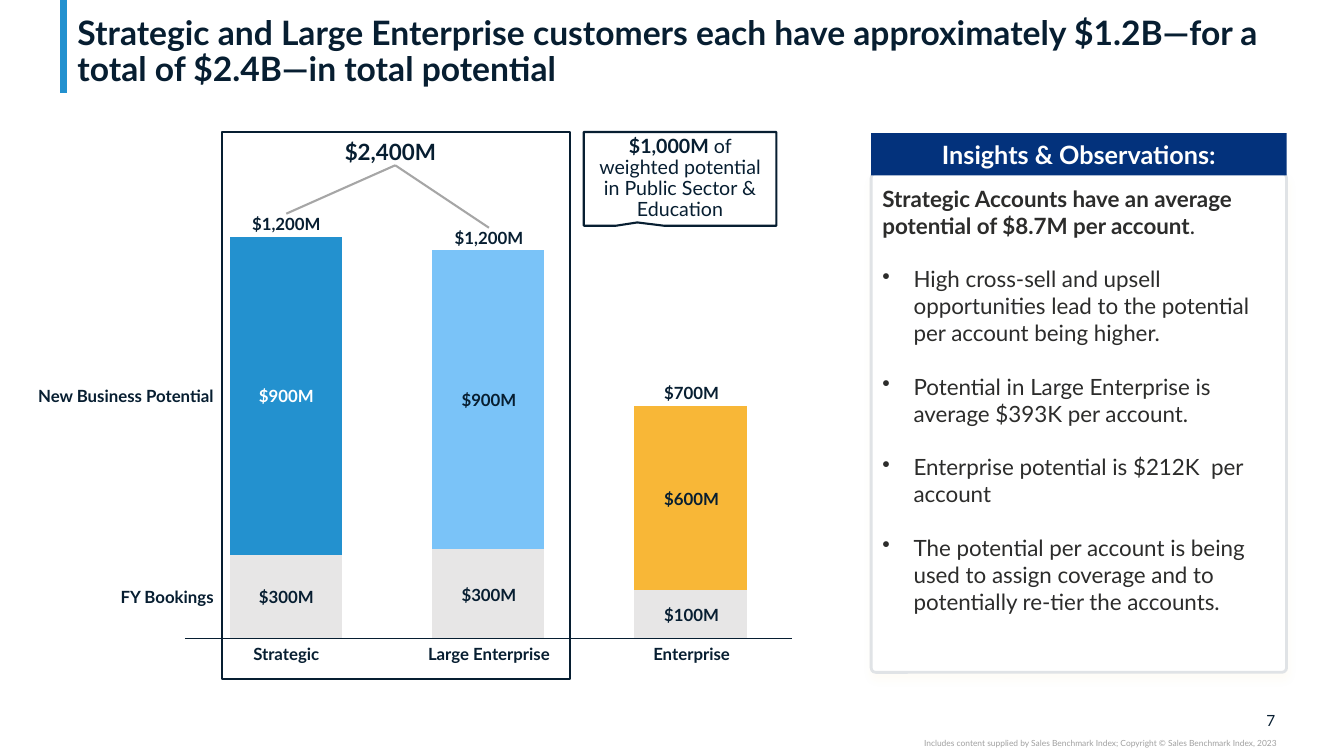
from dataclasses import dataclass
from typing import Any, NamedTuple

from lxml import etree
from pptx import Presentation
from pptx.chart import data as cd
from pptx.dml.color import RGBColor
from pptx.enum import chart as ch, shapes, text
from pptx.oxml.ns import qn
from pptx.util import Inches, Pt


@dataclass(frozen=True)
class Theme:
    face: str = "Lato"
    ink: str = "071E31"
    body: str = "2C2C2B"
    white: str = "FFFFFF"
    blue: str = "2391CF"
    sky: str = "7AC3F8"
    gold: str = "F8B737"
    navy: str = "03327C"
    pale: str = "E7E6E6"
    edge: str = "E0E3E6"
    ray: str = "A6A6A6"
    faint: str = "A0A0A0"
    title: float = 24
    head: float = 18
    large: float = 16
    call: float = 14
    label: float = 12
    page: float = 11
    tiny: float = 6


class Box(NamedTuple):
    x: float
    y: float
    w: float
    h: float


class Run(NamedTuple):
    words: str
    size: float
    color: str = "071E31"
    bold: bool = True


class Bar(NamedTuple):
    name: str
    total: str
    top: float
    gain: str
    mid: float
    book: str
    low: float
    fill: str
    tone: str


T = Theme()
AL, AN = text.PP_ALIGN, text.MSO_ANCHOR
FIRST, STEP, TALL = 2.84, 2.01, 0.2
BARS = [
    Bar("Strategic", "$1,200M", 2.12, "$900M", 3.83, "$300M", 5.82, T.blue, T.white),
    Bar("Large Enterprise", "$1,200M", 2.26, "$900M", 3.87, "$300M", 5.8, T.sky, T.ink),
    Bar("Enterprise", "$700M", 3.8, "$600M", 4.85, "$100M", 6, T.gold, T.ink),
]
NOTES = [
    "High cross-sell and upsell opportunities lead to the potential per account being higher.",
    "Potential in Large Enterprise is average $393K per account.",
    "Enterprise potential is $212K  per account",
    "The potential per account is being used to assign coverage and to potentially re-tier the accounts.",
]


def rgb(code: str) -> RGBColor:
    return RGBColor.from_string(code)


def put(item: Any, **vals: Any) -> None:
    for key, val in vals.items():
        setattr(item, key, val)


def node(root: Any, tag: str, **vals: Any) -> Any:
    return etree.SubElement(root, qn(tag), {k: str(v) for k, v in vals.items()})


def fill(item: Any, color: str) -> None:
    item.fill.solid()
    item.fill.fore_color.rgb = rgb(color)


def write(para: Any, runs: list[Run], **form: Any) -> None:
    put(para, **form)
    for part in runs:
        run = para.add_run()
        run.text = part.words
        put(run.font, name=T.face, size=Pt(part.size), bold=part.bold)
        run.font.color.rgb = rgb(part.color)


def frame(shape: Any, pad: tuple[float, float], anchor: Any, wrap: bool = True) -> Any:
    """Set insets (side, end), anchor and wrap; return the text frame."""
    side, end = map(Inches, pad)
    put(shape.text_frame, margin_left=side, margin_right=side, margin_top=end,
        margin_bottom=end, vertical_anchor=anchor, word_wrap=wrap)
    return shape.text_frame


def label(slide: Any, box: Box, run: Run, align: Any = AL.CENTER, anchor: Any = AN.MIDDLE,
          wrap: bool = False, side: float = 0, **form: Any) -> Any:
    shape = slide.shapes.add_textbox(*map(Inches, box))
    write(frame(shape, (side, 0), anchor, wrap).paragraphs[0], [run], alignment=align, **form)
    return shape


def block(slide: Any, kind: Any, box: Box, color: str | None = None,
          edge: str | None = None, width: float = 1.5) -> Any:
    shape = slide.shapes.add_shape(kind, *map(Inches, box))
    shape.shadow.inherit = False
    if color:
        fill(shape, color)
    else:
        shape.fill.background()
    if edge:
        shape.line.color.rgb = rgb(edge)
        shape.line.width = Pt(width)
    else:
        shape.line.fill.background()
    return shape


def rule(slide: Any, ends: tuple[float, ...], color: str, width: float) -> Any:
    line = slide.shapes.add_connector(shapes.MSO_CONNECTOR.STRAIGHT, *map(Inches, ends))
    line.line.color.rgb = rgb(color)
    line.line.width = Pt(width)
    node(line._element.spPr, "a:effectLst")
    return line


def stack(slide: Any) -> None:
    """Draw the stacked columns; labels are placed over them."""
    data = cd.CategoryChartData()
    data.categories = ["1", "2", "3"]
    data.add_series("Series 1", (26, 28, 15))
    data.add_series("Series 2", (100, 94, 58))
    box = Box(1.74, 2.26, 6.2, 4.16)
    chart = slide.shapes.add_chart(ch.XL_CHART_TYPE.COLUMN_STACKED,
                                   *map(Inches, box), data).chart
    put(chart, has_legend=False, has_title=False)
    put(chart.font, name=T.face, size=Pt(10))
    chart.font.color.rgb = rgb(T.ink)
    put(chart.value_axis, minimum_scale=0, maximum_scale=126, visible=False,
        has_major_gridlines=False)
    none = ch.XL_TICK_MARK.NONE
    axis = chart.category_axis
    put(axis, tick_label_position=ch.XL_TICK_LABEL_POSITION.NONE,
        major_tick_mark=none, minor_tick_mark=none)
    axis.format.line.color.rgb = rgb(T.ink)
    axis.format.line.width = Pt(0.75)
    plot = chart.plots[0]
    put(plot, gap_width=80, overlap=100, vary_by_categories=False)
    base, gain = plot.series
    fill(base.format, T.pale)
    fill(gain.format, T.blue)
    for i, bar in enumerate(BARS[1:], 1):
        fill(gain.points[i].format, bar.fill)
    area = chart._chartSpace.chart.plotArea
    for old in area.findall(qn("c:layout")):
        area.remove(old)
    lay = etree.Element(qn("c:layout"))
    area.insert(0, lay)
    man = node(lay, "c:manualLayout")
    for key, val in dict(layoutTarget="inner", xMode="edge", yMode="edge",
                         x=0.015, y=0.022, w=0.971, h=0.957).items():
        node(man, "c:" + key, val=val)


def panel(slide: Any) -> None:
    card = block(slide, shapes.MSO_SHAPE.ROUNDED_RECTANGLE, Box(8.64, 1.72, 4.12, 4.95),
                 T.white, T.edge, 2)
    card.adjustments[0] = 0.011
    glow = node(card._element.spPr.find(qn("a:effectLst")), "a:outerShdw", blurRad=Pt(6),
                dist=Pt(4), dir=5400000, algn="t", rotWithShape=0)
    node(node(glow, "a:srgbClr", val=T.gold), "a:alpha", val=4000)
    body = frame(card, (0.1, 0.1), AN.TOP)
    lead = "Strategic Accounts have an average potential of $8.7M per account"
    write(body.paragraphs[0], [Run(lead, T.large, T.body), Run(".", T.large, T.body, False)],
          alignment=AL.LEFT)
    for note in NOTES:
        para = body.add_paragraph()
        prop = para._p.get_or_add_pPr()
        for key, val in dict(marL=0.31, indent=-0.31).items():
            prop.set(key, str(Inches(val)))
        node(prop, "a:buChar", char="•")
        write(para, [Run(note, T.large, T.body, False)], alignment=AL.LEFT,
              space_before=Pt(19.2))
    head = block(slide, shapes.MSO_SHAPE.RECTANGLE, Box(8.64, 1.32, 4.12, 0.42), T.navy)
    write(frame(head, (0.1, 0.05), AN.MIDDLE).paragraphs[0],
          [Run("Insights & Observations:", T.head, T.white)], alignment=AL.CENTER)


def main() -> None:
    deck = Presentation()
    put(deck, slide_width=Inches(13.33), slide_height=Inches(7.5))
    slide = deck.slides.add_slide(deck.slide_layouts[6])
    rule(slide, (0.63, 0, 0.63, 0.92), T.blue, 5)
    label(slide, Box(12.32, 7.05, 0.33, 0.19), Run("7", T.page, bold=False), AL.RIGHT, wrap=True)
    label(slide, Box(7.5, 7.32, 5.16, 0.1),
          Run("Includes content supplied by Sales Benchmark Index; Copyright © Sales Benchmark Index, 2023",
              T.tiny, T.faint, False), AL.RIGHT, AN.TOP, True)
    label(slide, Box(0.67, 0.04, 11.99, 0.84),
          Run("Strategic and Large Enterprise customers each have approximately $1.2B—for a total "
              "of $2.4B—in total potential", T.title),
          AL.LEFT, AN.BOTTOM, True, 0.1, line_spacing=0.9)
    stack(slide)
    tops = []
    for i, bar in enumerate(BARS):
        x = FIRST + i * STEP
        for words, y, tone in ((bar.gain, bar.mid, bar.tone), (bar.book, bar.low, T.ink),
                               (bar.name, 6.39, T.ink), (bar.total, bar.top, T.ink)):
            tag = label(slide, Box(x - 0.67, y, 1.34, TALL), Run(words, T.label, tone))
        tops.append(tag)
    for words, y in (("New Business Potential", BARS[0].mid), ("FY Bookings", BARS[0].low)):
        label(slide, Box(0.24, y, 1.88, TALL), Run(words, T.label), AL.RIGHT)
    panel(slide)
    block(slide, shapes.MSO_SHAPE.RECTANGLE, Box(2.2, 1.31, 3.45, 5.43), edge=T.ink)
    total = label(slide, Box(3.42, 1.34, 1, 0.3), Run("$2,400M", T.large), AL.LEFT, AN.BOTTOM)
    for tag in tops[:2]:
        ray = rule(slide, (0, 0, 1, 1), T.ray, 1.5)
        ray.begin_connect(total, 2)
        ray.end_connect(tag, 0)
    call = block(slide, shapes.MSO_SHAPE.RECTANGULAR_CALLOUT, Box(5.79, 1.31, 1.91, 0.93),
                 T.white, T.ink)
    call.adjustments[0], call.adjustments[1] = -0.222, 0.465
    write(frame(call, (0.1, 0.05), AN.MIDDLE).paragraphs[0],
          [Run("$1,000M ", T.call),
           Run("of weighted potential in Public Sector & Education", T.call, bold=False)],
          alignment=AL.CENTER, line_spacing=0.9)
    deck.save("out.pptx")


if __name__ == "__main__":
    main()
